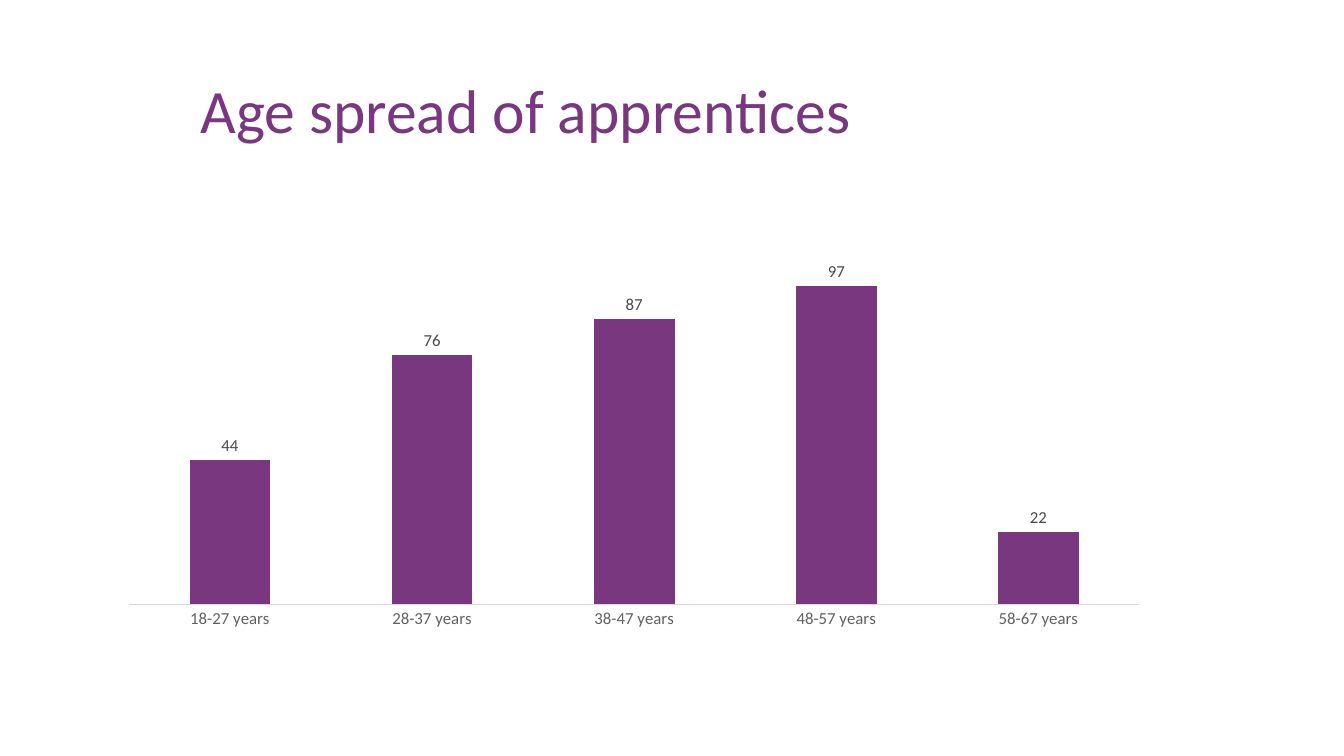
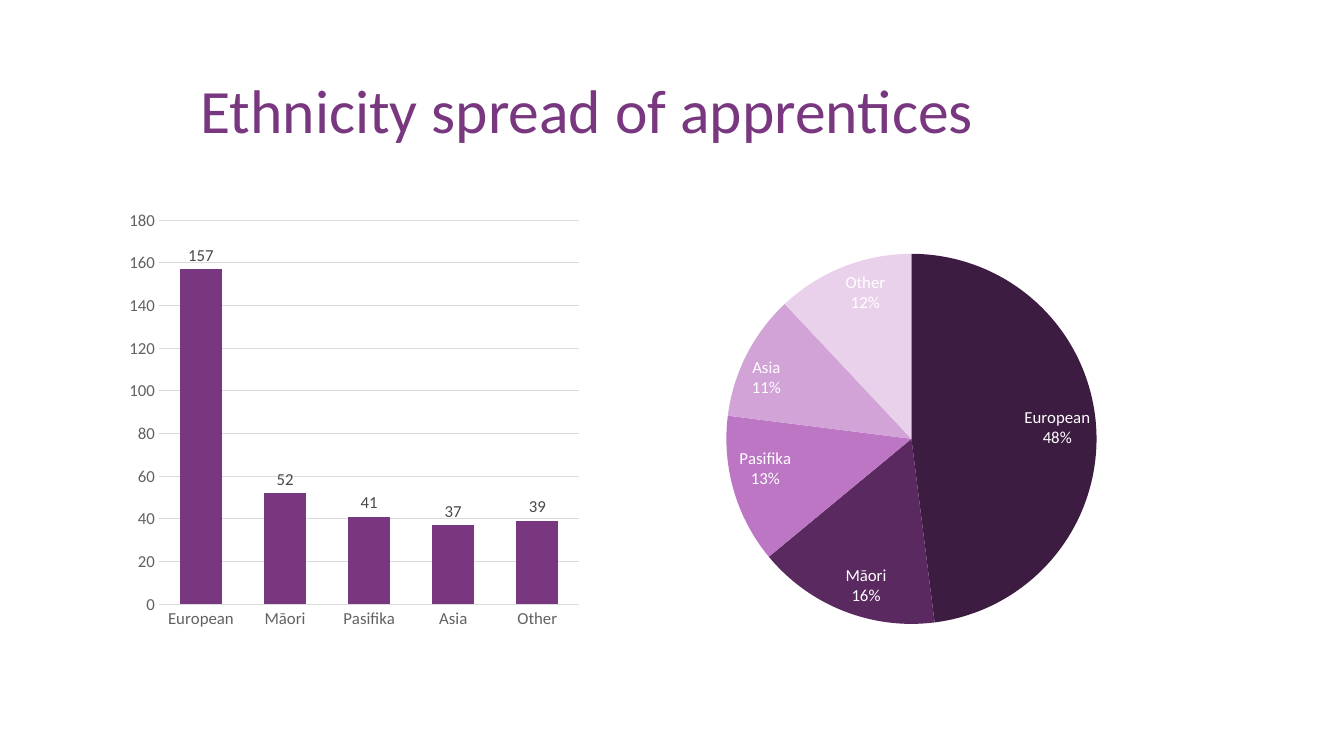
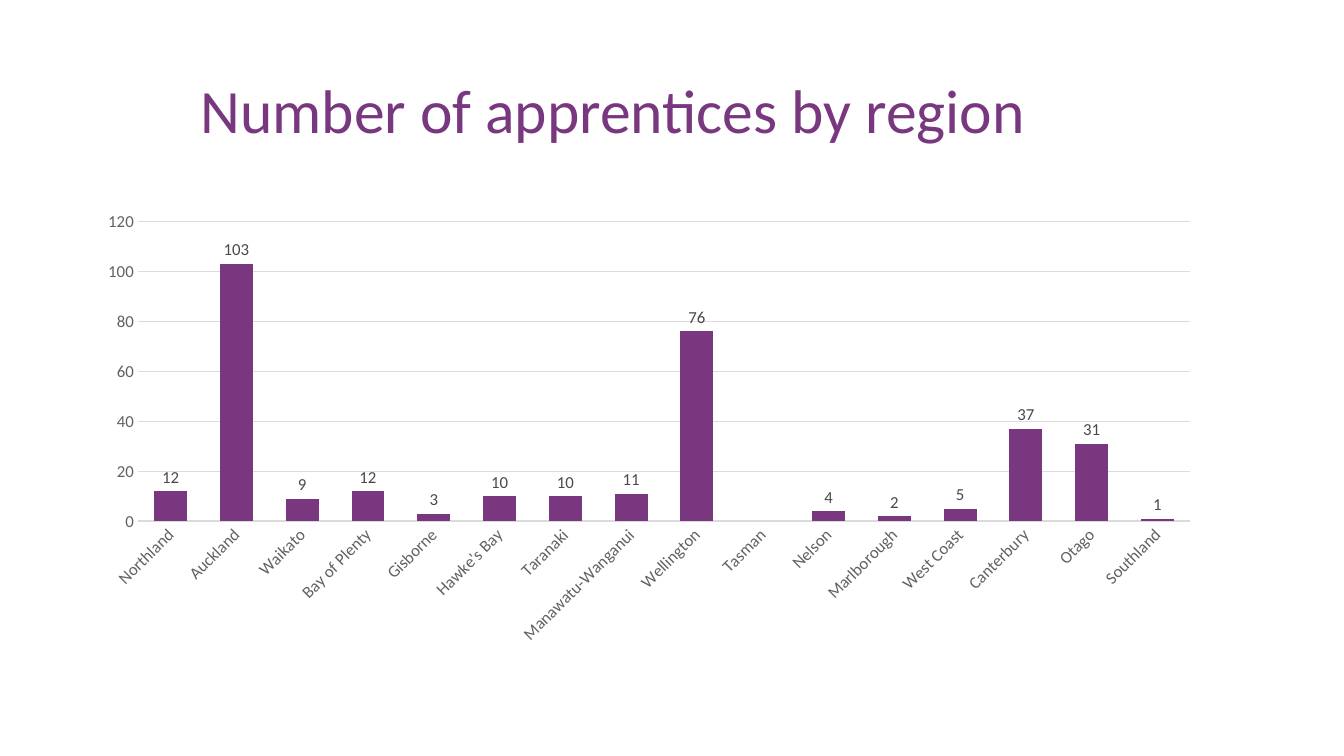
from lxml.etree import SubElement
from pptx import Presentation
from pptx.chart.data import CategoryChartData
from pptx.dml.color import RGBColor
from pptx.enum.chart import XL_CHART_TYPE, XL_LABEL_POSITION, XL_TICK_MARK
from pptx.enum.text import MSO_ANCHOR
from pptx.oxml.ns import qn
from pptx.util import Inches, Pt

FONT = "Calibri"
PURPLE = RGBColor(0x78, 0x37, 0x7F)
WHITE = RGBColor(0xFF, 0xFF, 0xFF)
AXIS_TEXT = RGBColor(0x61, 0x61, 0x61)
LABEL_TEXT = RGBColor(0x49, 0x49, 0x49)
GRID_GREY = RGBColor(0xDB, 0xDB, 0xDB)
PIE_COLORS = [
    RGBColor(0x3C, 0x1C, 0x40),
    RGBColor(0x5A, 0x29, 0x5F),
    RGBColor(0xBC, 0x76, 0xC4),
    RGBColor(0xD2, 0xA3, 0xD7),
    RGBColor(0xE9, 0xD1, 0xEB),
]

TITLE_BOX = (1.89, 0.4, 10.53, 1.45)
AGE_BOX = (1.07, 2, 10.44, 4.32)
ETHNICITY_COLUMN_BOX = (1.19, 2, 4.65, 4.32)
ETHNICITY_PIE_BOX = (6.46, 2, 4.65, 4.32)
REGION_BOX = (0.85, 2.01, 11.18, 4.47)
PIE_LAYOUT = {"x": 0.16, "y": 0.12, "w": 0.79, "h": 0.85}

AGES = {
    "18-27 years": 44,
    "28-37 years": 76,
    "38-47 years": 87,
    "48-57 years": 97,
    "58-67 years": 22,
}
ETHNICITY_COUNTS = {"European": 157, "Māori": 52, "Pasifika": 41, "Asia": 37, "Other": 39}
ETHNICITY_SHARES = {"European": 48, "Māori": 16, "Pasifika": 13, "Asia": 11, "Other": 12}
REGIONS = {
    "Northland": 12,
    "Auckland": 103,
    "Waikato": 9,
    "Bay of Plenty": 12,
    "Gisborne": 3,
    "Hawke's Bay": 10,
    "Taranaki": 10,
    "Manawatu-Wanganui": 11,
    "Wellington": 76,
    "Tasman": None,
    "Nelson": 4,
    "Marlborough": 2,
    "West Coast": 5,
    "Canterbury": 37,
    "Otago": 31,
    "Southland": 1,
}


def style_font(font, size, color):
    font.name = FONT
    font.size = Pt(size)
    font.color.rgb = color


def add_titled_slide(presentation, title):
    slide = presentation.slides.add_slide(presentation.slide_layouts[6])
    frame = slide.shapes.add_textbox(*map(Inches, TITLE_BOX)).text_frame
    frame.word_wrap = True
    frame.vertical_anchor = MSO_ANCHOR.MIDDLE
    paragraph = frame.paragraphs[0]
    paragraph.text = title
    paragraph.line_spacing = 0.9
    style_font(paragraph.font, 44, PURPLE)
    return slide


def add_chart(slide, chart_type, box, values, label_color, label_position):
    data = CategoryChartData()
    data.categories = list(values)
    data.add_series("Series 1", list(values.values()))
    chart = slide.shapes.add_chart(chart_type, *map(Inches, box), data).chart
    chart.has_title = False
    chart.has_legend = False
    style_font(chart.font, 12, label_color)
    plot = chart.plots[0]
    plot.has_data_labels = True
    style_font(plot.data_labels.font, 12, label_color)
    plot.data_labels.position = label_position
    return chart


def add_column_chart(slide, box, values, gap=100, overlap=-24, show_scale=True, rotation=None):
    chart = add_chart(slide, XL_CHART_TYPE.COLUMN_CLUSTERED, box, values,
                      LABEL_TEXT, XL_LABEL_POSITION.OUTSIDE_END)
    plot = chart.plots[0]
    plot.vary_by_categories = False
    plot.gap_width = gap
    plot.overlap = overlap
    plot.data_labels.show_value = True
    fill = plot.series[0].format.fill
    fill.solid()
    fill.fore_color.rgb = PURPLE

    for axis in (chart.category_axis, chart.value_axis):
        axis.major_tick_mark = XL_TICK_MARK.NONE
        axis.minor_tick_mark = XL_TICK_MARK.NONE
        style_font(axis.tick_labels.font, 12, AXIS_TEXT)

    category_line = chart.category_axis.format.line
    category_line.color.rgb = GRID_GREY
    category_line.width = Pt(1)
    if rotation is not None:
        body = chart.category_axis._element.find(qn("c:txPr")).find(qn("a:bodyPr"))
        body.set("rot", str(rotation * 60000))

    value_axis = chart.value_axis
    value_axis.visible = show_scale
    value_axis.has_major_gridlines = show_scale
    value_axis.format.line.fill.background()
    if show_scale:
        grid_line = value_axis.major_gridlines.format.line
        grid_line.color.rgb = GRID_GREY
        grid_line.width = Pt(0.75)


def place_plot(chart, shares):
    plot_area = chart._chartSpace.chart.plotArea
    for old_layout in plot_area.findall(qn("c:layout")):
        plot_area.remove(old_layout)
    layout = SubElement(plot_area, qn("c:layout"))
    plot_area.insert(0, layout)
    manual = SubElement(layout, qn("c:manualLayout"))
    settings = {"layoutTarget": "inner", "xMode": "edge", "yMode": "edge", **shares}
    for name, value in settings.items():
        SubElement(manual, qn(f"c:{name}")).set("val", str(value))


def add_pie_chart(slide, box, values):
    chart = add_chart(slide, XL_CHART_TYPE.PIE, box, values,
                      WHITE, XL_LABEL_POSITION.INSIDE_END)
    place_plot(chart, PIE_LAYOUT)
    plot = chart.plots[0]
    plot.vary_by_categories = True
    labels = plot.data_labels
    labels.show_value = False
    labels.show_category_name = True
    labels.show_percentage = True
    labels.number_format = "0%"
    labels.number_format_is_linked = False
    separator = SubElement(labels._element, qn("c:separator"))
    separator.text = "\n"
    labels._element.find(qn("c:showBubbleSize")).addnext(separator)
    for index, color in enumerate(PIE_COLORS):
        point_format = plot.series[0].points[index].format
        point_format.fill.solid()
        point_format.fill.fore_color.rgb = color
        point_format.line.fill.background()


def main():
    presentation = Presentation()
    presentation.slide_width = Inches(13.33)
    presentation.slide_height = Inches(7.5)

    age_slide = add_titled_slide(presentation, "Age spread of apprentices")
    add_column_chart(age_slide, AGE_BOX, AGES, gap=150, overlap=-25, show_scale=False)

    ethnicity_slide = add_titled_slide(presentation, "Ethnicity spread of apprentices")
    add_column_chart(ethnicity_slide, ETHNICITY_COLUMN_BOX, ETHNICITY_COUNTS)
    add_pie_chart(ethnicity_slide, ETHNICITY_PIE_BOX, ETHNICITY_SHARES)

    region_slide = add_titled_slide(presentation, "Number of apprentices by region")
    add_column_chart(region_slide, REGION_BOX, REGIONS, rotation=-45)

    presentation.save("out.pptx")


if __name__ == "__main__":
    main()
